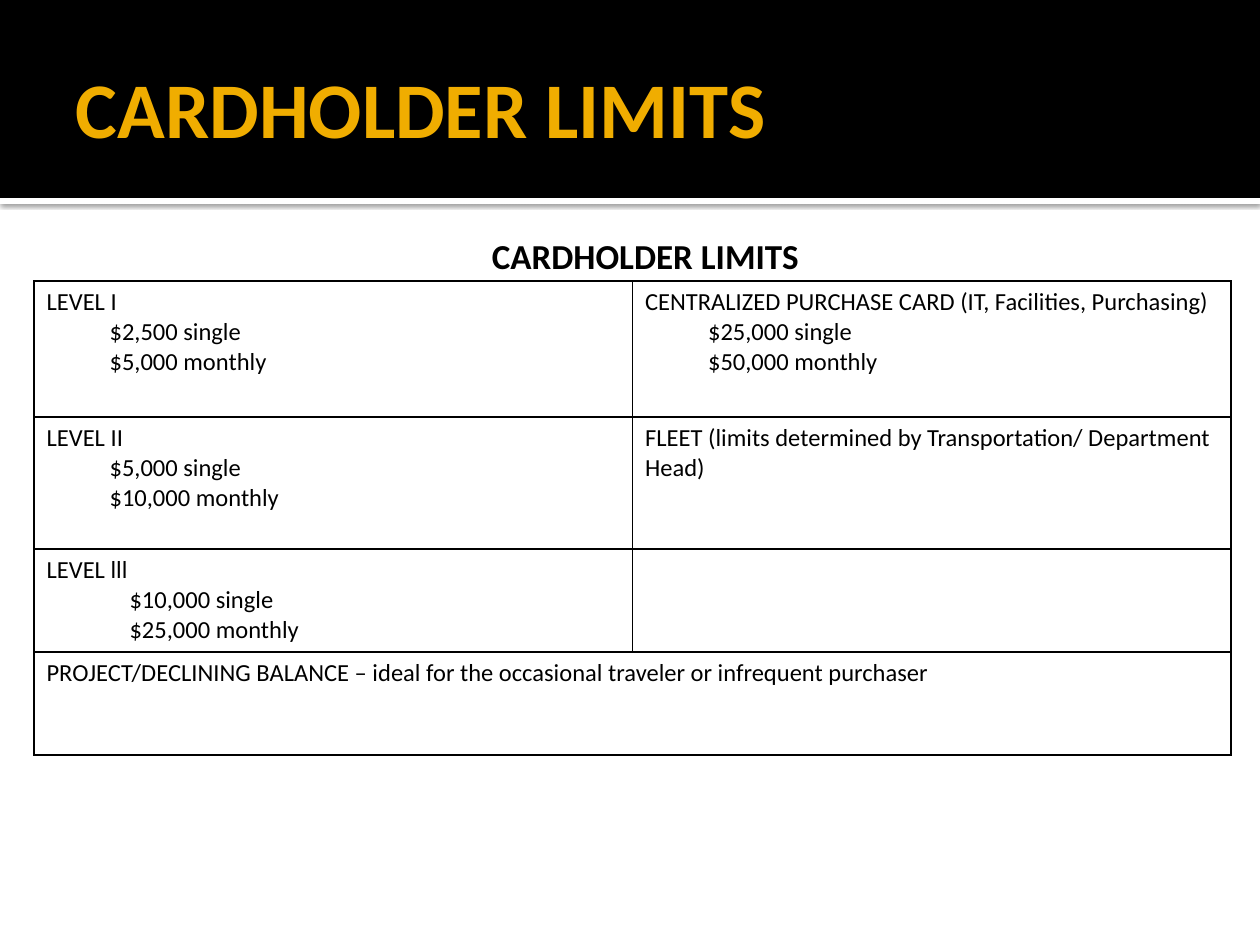
from lxml import etree
from pptx import Presentation
from pptx import util as u
from pptx.dml.color import RGBColor
from pptx.enum import shapes, text
from pptx.oxml import parse_xml
from pptx.oxml.ns import nsdecls, qn

PX = 914400 / 126
BLACK, WHITE, GOLD = "000000", "FFFFFF", "F0AD00"
STEP, DEEP_STEP = 63, 83
ROW_HEIGHTS = [136, 132, 103, 103]
CELLS = {
    (0, 0): (STEP, ["LEVEL I", "$2,500 single", "$5,000 monthly"]),
    (0, 1): (STEP, ["CENTRALIZED PURCHASE CARD (IT, Facilities, Purchasing)",
                    "$25,000 single", "$50,000 monthly"]),
    (1, 0): (STEP, ["LEVEL II", "$5,000 single", "$10,000 monthly"]),
    (1, 1): (0, ["FLEET (limits determined by Transportation/ Department Head)"]),
    (2, 0): (DEEP_STEP, ["LEVEL lll", "$10,000 single", "$25,000 monthly"]),
    (3, 0): (0, ["PROJECT/DECLINING BALANCE – ideal for the occasional "
                 "traveler or infrequent purchaser"]),
}


def px(count):
    return u.Emu(round(count * PX))


def color(value):
    return RGBColor.from_string(value)


def write(para, words, size, ink=BLACK, bold=False, indent=0):
    span = para.add_run()
    span.text = words
    for name, value in {"name": "Calibri", "size": u.Pt(size), "bold": bold}.items():
        setattr(span.font, name, value)
    span.font.color.rgb = color(ink)
    props = para._p.get_or_add_pPr()
    props.set("marL", str(px(indent)))
    props.set("indent", "0")


def format_frame(frame, left, top, right, bottom, anchor):
    values = {"margin_left": px(left), "margin_top": px(top),
              "margin_right": px(right), "margin_bottom": px(bottom),
              "vertical_anchor": anchor, "word_wrap": True,
              "auto_size": text.MSO_AUTO_SIZE.NONE}
    for name, value in values.items():
        setattr(frame, name, value)


def add_band(page, left, top, width, height, fill):
    band = page.shapes.add_shape(shapes.MSO_SHAPE.RECTANGLE,
                                 px(left), px(top), px(width), px(height))
    band.shadow.inherit = False
    band.fill.solid()
    band.fill.fore_color.rgb = color(fill)
    band.line.fill.background()
    return band


def add_drop_shadow(shape):
    effects = shape._element.spPr.find(qn("a:effectLst"))
    effects.append(parse_xml(
        f'<a:outerShdw {nsdecls("a")} blurRad="{u.Pt(2.5)}" dist="{u.Pt(0.8)}" '
        f'dir="5400000" algn="t" rotWithShape="0"><a:srgbClr val="{BLACK}">'
        '<a:alpha val="60000"/></a:srgbClr></a:outerShdw>'))


def add_header(page, left, top, width, height):
    rule = add_band(page, left, top + height, width, 6, WHITE)
    add_drop_shadow(rule)
    add_band(page, left, top, width, height, BLACK)
    title = page.shapes.title
    page.shapes.element.append(title._element)  # in front of the bands
    title.left, title.top = px(left + 63), px(top + 21)
    title.width, title.height = px(width - 126), px(height - 25)
    format_frame(title.text_frame, 13, 6, 6, 6, text.MSO_ANCHOR.MIDDLE)
    para = title.text_frame.paragraphs[0]
    para.alignment = text.PP_ALIGN.LEFT
    write(para, "CARDHOLDER LIMITS", 45, GOLD, True)


def add_caption(page, left, top, width, height):
    box = page.shapes.add_textbox(px(left), px(top), px(width), px(height))
    format_frame(box.text_frame, 8, 13, 13, 6, text.MSO_ANCHOR.TOP)
    para = box.text_frame.paragraphs[0]
    para.alignment = text.PP_ALIGN.CENTER
    write(para, "CARDHOLDER LIMITS", 20, bold=True, indent=16)


def add_borders(cell):
    props = cell._tc.get_or_add_tcPr()
    for index, side in enumerate(("lnL", "lnR", "lnT", "lnB")):
        line = etree.Element(qn(f"a:{side}"), w=str(u.Pt(1)))
        fill = etree.SubElement(line, qn("a:solidFill"))
        etree.SubElement(fill, qn("a:srgbClr"), val=BLACK)
        props.insert(index, line)


def add_limits_table(page, left, top, width):
    table = page.shapes.add_table(len(ROW_HEIGHTS), 2, px(left), px(top),
                                  px(width), px(sum(ROW_HEIGHTS))).table
    table.first_row = table.horz_banding = False
    for row, height in zip(table.rows, ROW_HEIGHTS):
        row.height = px(height)
    for cell in table.iter_cells():
        cell.fill.background()
        add_borders(cell)
    table.cell(3, 0).merge(table.cell(3, 1))
    for (row, column), (indent, lines) in CELLS.items():
        frame = table.cell(row, column).text_frame
        for index, words in enumerate(lines):
            para = frame.add_paragraph() if index else frame.paragraphs[0]
            write(para, words, 14, indent=indent if index else 0)


def main():
    deck = Presentation()
    deck.slide_width, deck.slide_height = px(1260), px(945)
    page = deck.slides.add_slide(deck.slide_layouts[5])
    page.background.fill.solid()
    page.background.fill.fore_color.rgb = color(WHITE)
    add_header(page, 0, 0, 1260, 198)
    add_caption(page, 73, 221, 1134, 470)
    add_limits_table(page, 34, 281, 1197)
    deck.save("out.pptx")


if __name__ == "__main__":
    main()
